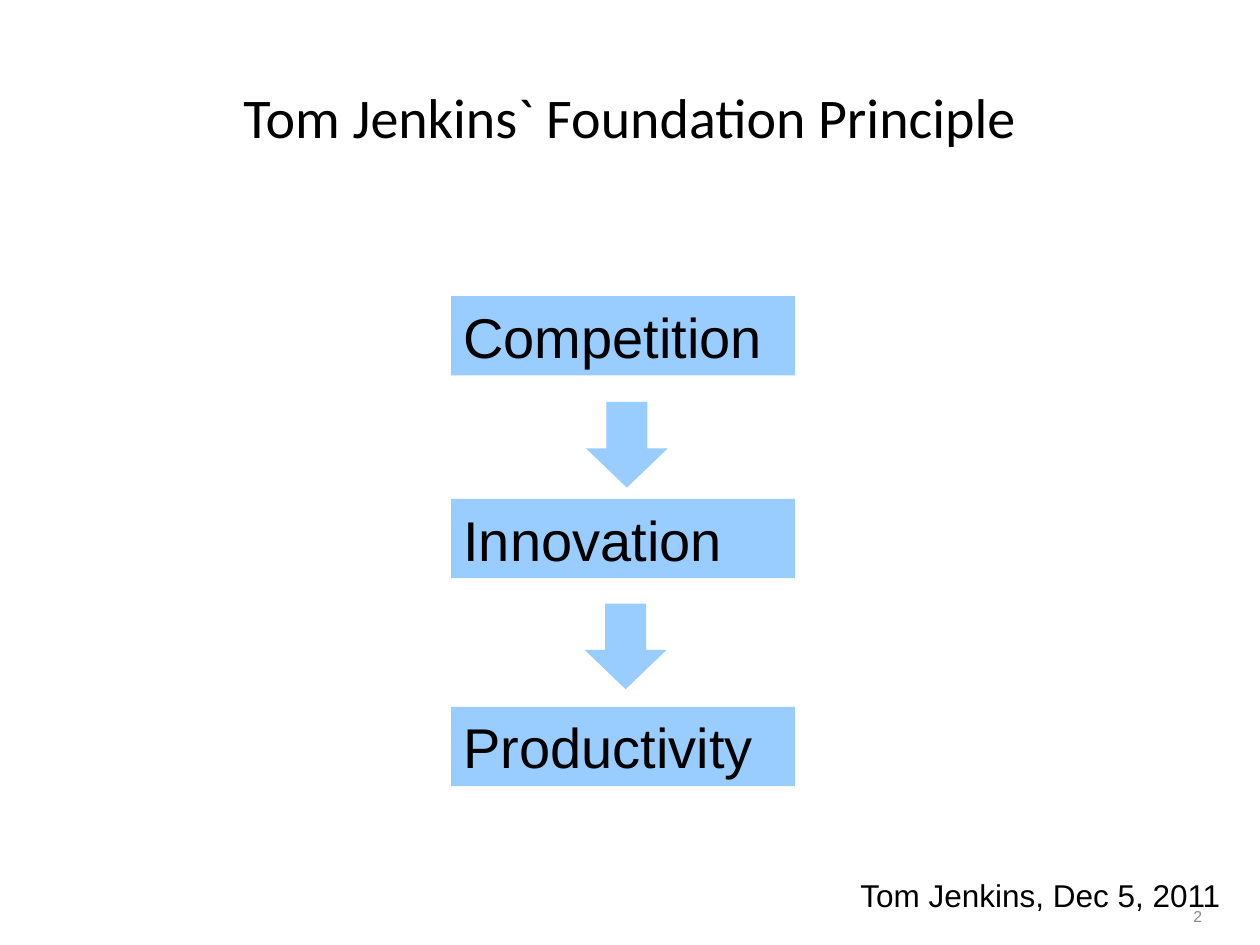
"""Build a slide that leads from competition to productivity."""
from typing import NamedTuple

from pptx import Presentation
from pptx.dml.color import RGBColor as Rgb
from pptx.enum.shapes import MSO_SHAPE as Shape
from pptx.enum.text import MSO_ANCHOR as Anchor, PP_ALIGN as Align
from pptx.util import Inches, Pt

COLORS = {"fill": "99CCFF", "text": "000000", "page": "898989"}


class Box(NamedTuple):
    left: float
    top: float
    width: float
    height: float


class Step(NamedTuple):
    label: str
    top: float


class Arrow(NamedTuple):
    left: float
    top: float


STEPS = [Step("Competition", 2.35), Step("Innovation", 3.96), Step("Productivity", 5.61)]
ARROWS = [Arrow(4.65, 3.19), Arrow(4.64, 4.79)]


def place(box: Box) -> list:
    return [Inches(side) for side in box]


def write(frame, text: str, *, size: float = 32, font: str = "Arial",
          color: str = "text", align=Align.LEFT, anchor=Anchor.TOP,
          wrap: bool = True) -> None:
    frame.word_wrap = wrap
    frame.vertical_anchor = anchor
    line = frame.paragraphs[0]
    line.alignment = align
    run = line.add_run()
    run.text = text
    run.font.size = Pt(size)
    run.font.name = font
    run.font.color.rgb = Rgb.from_string(COLORS[color])


def add_text(slide, box: Box, text: str, **style) -> None:
    write(slide.shapes.add_textbox(*place(box)).text_frame, text, **style)


def add_solid(slide, kind, box: Box):
    shape = slide.shapes.add_shape(kind, *place(box))
    shape.shadow.inherit = False
    shape.fill.solid()
    shape.fill.fore_color.rgb = Rgb.from_string(COLORS["fill"])
    shape.line.fill.background()
    return shape


def draw_step(slide, step: Step) -> None:
    shape = add_solid(slide, Shape.RECTANGLE, Box(3.58, step.top, 2.73, 0.63))
    write(shape.text_frame, step.label)


def draw_arrow(slide, arrow: Arrow) -> None:
    shape = add_solid(slide, Shape.DOWN_ARROW, Box(arrow.left, arrow.top, 0.65, 0.68))
    shape.adjustments[0] = 0.5
    shape.adjustments[1] = 0.48


def main() -> None:
    deck = Presentation()
    deck.slide_width, deck.slide_height = Inches(10), Inches(7.5)
    slide = deck.slides.add_slide(deck.slide_layouts[6])
    add_text(slide, Box(0.5, 0.3, 9, 1.25), "Tom Jenkins` Foundation Principle",
             font="Calibri", align=Align.CENTER, anchor=Anchor.MIDDLE)
    for step in STEPS:
        draw_step(slide, step)
    for arrow in ARROWS:
        draw_arrow(slide, arrow)
    add_text(slide, Box(7.31, 7.01, 2.33, 0.52), "2", size=9, color="page",
             align=Align.RIGHT, anchor=Anchor.MIDDLE)
    add_text(slide, Box(6.73, 6.9, 3.09, 0.4), "Tom Jenkins, Dec 5, 2011",
             size=18, wrap=False)
    deck.save("out.pptx")


if __name__ == "__main__":
    main()
